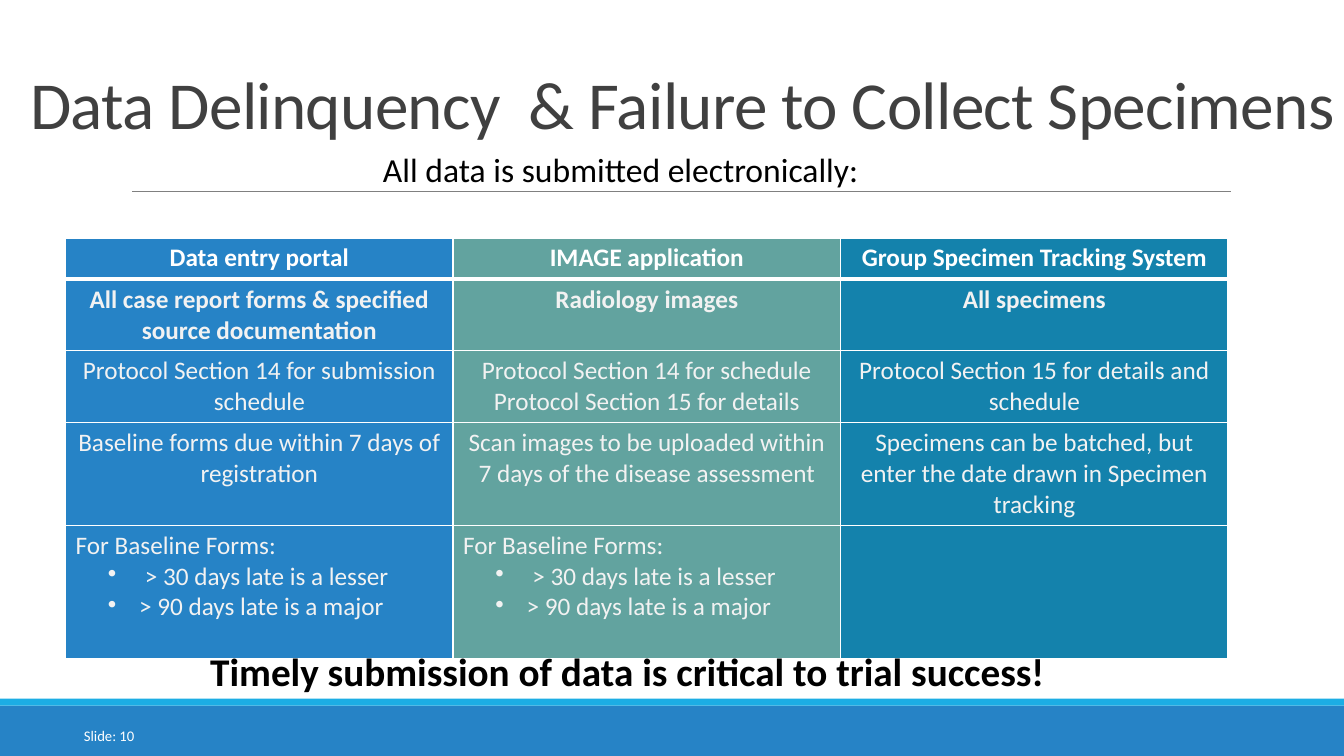
from lxml import etree
from pptx import Presentation
from pptx.dml.color import RGBColor
from pptx.enum.shapes import MSO_CONNECTOR, MSO_SHAPE
from pptx.enum.text import MSO_ANCHOR, MSO_AUTO_SIZE, PP_ALIGN
from pptx.oxml import parse_xml
from pptx.oxml.ns import nsdecls, qn
from pptx.util import Inches, Pt

LEFT, CENTER, RIGHT = PP_ALIGN.LEFT, PP_ALIGN.CENTER, PP_ALIGN.RIGHT
TOP, MIDDLE, BOTTOM = MSO_ANCHOR.TOP, MSO_ANCHOR.MIDDLE, MSO_ANCHOR.BOTTOM
RECTANGLE, STRAIGHT, NO_AUTOFIT = MSO_SHAPE.RECTANGLE, MSO_CONNECTOR.STRAIGHT, MSO_AUTO_SIZE.NONE

COLORS = {
    "blue": "2683C6", "sky": "1CADE4", "green": "62A39F", "teal": "1482AC",
    "rule": "808080", "title": "404040", "black": "000000",
    "white": "FFFFFF", "pale": "F2F2F2",
}

presentation = Presentation()
presentation.slide_width, presentation.slide_height = Inches(13.33), Inches(7.5)
slide = presentation.slides.add_slide(presentation.slide_layouts[5])


def share(left, top, width, height):
    across, down = presentation.slide_width / 100, presentation.slide_height / 100
    return int(left * across), int(top * down), int(width * across), int(height * down)


def write(paragraph, text, color, size, bold=False, alignment=LEFT):
    paragraph.alignment = alignment
    run = paragraph.add_run()
    run.text = text
    formats = {"name": "Calibri", "size": Pt(size), "bold": bold}
    for name, value in formats.items():
        setattr(run.font, name, value)
    run.font.color.rgb = RGBColor.from_string(COLORS[color])
    return run


for color, top, height in [("blue", 93.33, 6.67), ("sky", 92.4, 0.93)]:
    bar = slide.shapes.add_shape(RECTANGLE, *share(0, top, 100, height))
    bar.shadow.inherit = False
    bar.fill.solid()
    bar.fill.fore_color.rgb = RGBColor.from_string(COLORS[color])
    bar.line.fill.background()

rule_left, rule_top, rule_width, rule_height = share(9.83, 25.33, 81.77, 0)
rule = slide.shapes.add_connector(
    STRAIGHT, rule_left, rule_top, rule_left + rule_width, rule_top)
rule.line.color.rgb = RGBColor.from_string(COLORS["rule"])
rule.line.width = Pt(0.5)
etree.SubElement(rule._element.spPr, qn("a:effectLst"))

title = slide.shapes.title
title.left, title.top, title.width, title.height = share(1.5, 1.47, 98.55, 18.13)
title_formats = {"vertical_anchor": BOTTOM, "word_wrap": True, "auto_size": NO_AUTOFIT}
for name, value in title_formats.items():
    setattr(title.text_frame, name, value)
heading = title.text_frame.paragraphs[0]
heading.line_spacing = 0.85
heading_run = write(heading, "Data Delinquency  & Failure to Collect Specimens", "title", 48)
heading_run.font._element.set("spc", "-50")

late_rules = ["For Baseline Forms:", "•  > 30 days late is a lesser", "• > 90 days late is a major"]
columns = [
    ("blue", [
        ["Data entry portal"],
        ["All case report forms & specified source documentation"],
        ["Protocol Section 14 for submission schedule"],
        ["Baseline forms due within 7 days of registration"],
        late_rules,
    ]),
    ("green", [
        ["IMAGE application"],
        ["Radiology images"],
        ["Protocol Section 14 for schedule", "Protocol Section 15 for details"],
        ["Scan images to be uploaded within 7 days of the disease assessment"],
        late_rules,
    ]),
    ("teal", [
        ["Group Specimen Tracking System"],
        ["All specimens"],
        ["Protocol Section 15 for details and schedule"],
        ["Specimens can be batched, but enter the date drawn in Specimen tracking"],
        [],
    ]),
]
row_shares = [5.47, 9.47, 9.33, 13.6, 17.6]
last_row = len(row_shares) - 1

table = slide.shapes.add_table(
    len(row_shares), len(columns), *share(4.88, 31.47, 86.5, sum(row_shares))).table
table.first_row = table.horz_banding = False
for row, row_share in zip(table.rows, row_shares):
    row.height = int(presentation.slide_height * row_share / 100)

for column_index, (fill, cells) in enumerate(columns):
    for row_index, lines in enumerate(cells):
        cell = table.cell(row_index, column_index)
        properties = cell._tc.get_or_add_tcPr()
        heavy_side = {0: "B", 1: "T"}.get(row_index)
        for side in "LRTB":
            width = Pt(3 if side == heavy_side else 1)
            properties.append(parse_xml(
                f'<a:ln{side} {nsdecls("a")} w="{width}"><a:solidFill>'
                f'<a:srgbClr val="{COLORS["white"]}"/></a:solidFill></a:ln{side}>'))
        cell.fill.solid()
        cell.fill.fore_color.rgb = RGBColor.from_string(COLORS[fill])
        for line_index, line in enumerate(lines):
            frame = cell.text_frame
            paragraph = frame.add_paragraph() if line_index else frame.paragraphs[0]
            if line.startswith("•"):
                paragraph_properties = paragraph._p.get_or_add_pPr()
                paragraph_properties.set("marL", str(Inches(0.63)))
                paragraph_properties.set("indent", str(-Inches(0.31)))
                etree.SubElement(paragraph_properties, qn("a:buChar")).set("char", "•")
            write(paragraph, line.removeprefix("• "), "pale" if row_index else "white", 18,
                  row_index < 2, LEFT if row_index == last_row else CENTER)

labels = [
    ("Slide: 10", (0, 94.67, 10.73, 5.33), MIDDLE, True, ("white", 10.5, False, RIGHT)),
    ("Timely submission of data is critical to trial success!",
     (12.68, 84.93, 67.97, 7.6), TOP, True, ("black", 28, True, CENTER)),
    ("All data is submitted electronically:",
     (27.76, 19.07, 37.81, 6.67), TOP, False, ("black", 24, False, LEFT)),
]
for text, box, anchor, wrap, style in labels:
    frame = slide.shapes.add_textbox(*share(*box)).text_frame
    frame.vertical_anchor = anchor
    frame.word_wrap = wrap
    write(frame.paragraphs[0], text, *style)

presentation.save("out.pptx")
